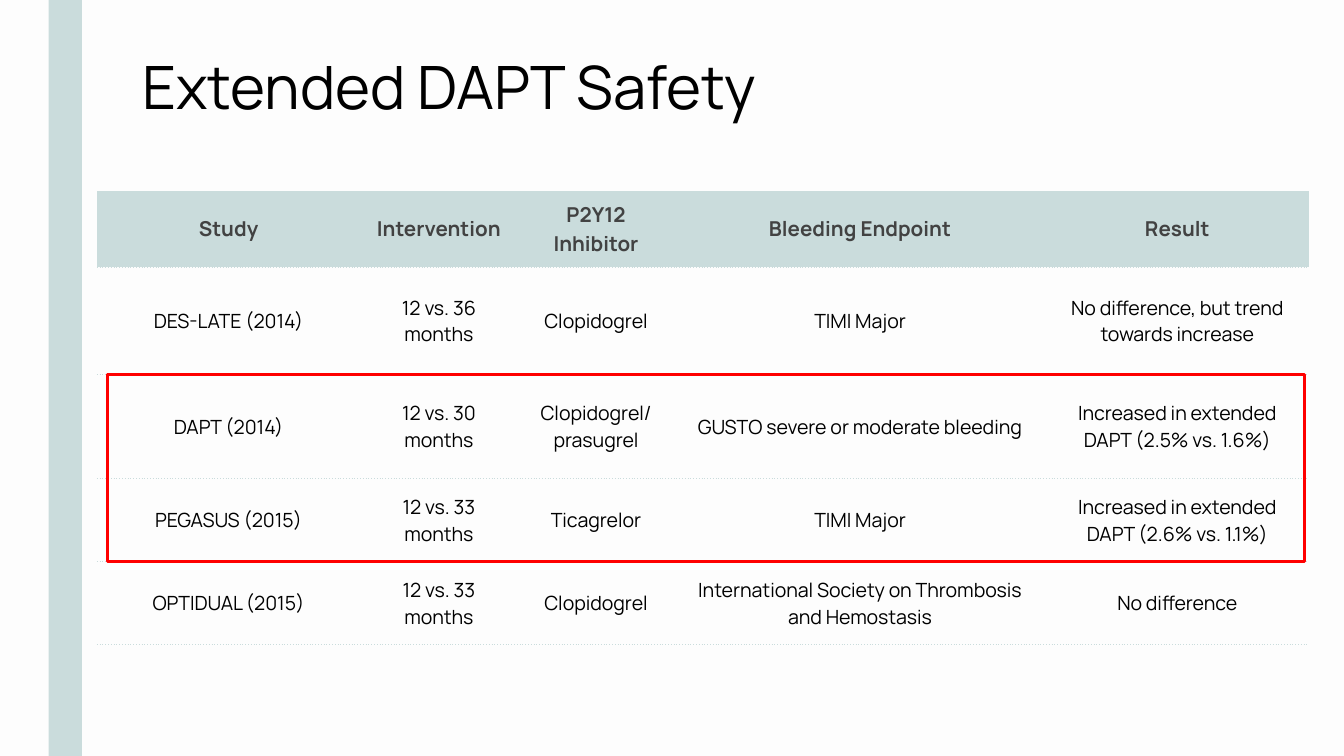
from lxml.etree import SubElement
from pptx import Presentation
from pptx.dml.color import RGBColor as Rgb
from pptx.enum.shapes import MSO_SHAPE as Preset
from pptx.enum.text import MSO_ANCHOR as Anchor, PP_ALIGN as Align
from pptx.oxml import parse_xml
from pptx.oxml.ns import nsdecls, qn
from pptx.util import Cm, Pt

TITLE = "Extended DAPT Safety"
HEADER = ["Study", "Intervention", "P2Y12 Inhibitor", "Bleeding Endpoint", "Result"]
STUDIES = [
    ["DES-LATE (2014)", "12 vs. 36 months", "Clopidogrel", "TIMI Major",
     "No difference, but trend towards increase"],
    ["DAPT (2014)", "12 vs. 30 months", "Clopidogrel/ prasugrel",
     "GUSTO severe or moderate bleeding", "Increased in extended DAPT (2.5% vs. 1.6%)"],
    ["PEGASUS (2015)", "12 vs. 33 months", "Ticagrelor", "TIMI Major",
     "Increased in extended DAPT (2.6% vs. 1.1%)"],
    ["OPTIDUAL (2015)", "12 vs. 33\nmonths", "Clopidogrel",
     "International Society on Thrombosis and Hemostasis", "No difference"],
]

THEME = {
    "background": "FDFDFD",
    "accent": "CADCDC",
    "highlight": "FF0000",
    "title": {"name": "Manrope", "size": Pt(32), "bold": False, "color": "000000"},
    "header": {"name": "Manrope", "size": Pt(11), "bold": True, "color": "424242"},
    "body": {"name": "Manrope", "size": Pt(10.5), "bold": False, "color": "000000"},
}
PLAIN_TABLE = "{2D5ABB26-0587-4C30-8999-92F81FD0307C}"
SLIDE_WIDTH, SLIDE_HEIGHT = 25.4, 14.29
TABLE_LEFT, TABLE_TOP = 1.83, 3.61
COLUMN_WIDTHS = [4.98, 2.97, 2.97, 7.01, 4.98]
ROW_HEIGHTS = [1.44, 2.03, 1.97, 1.57, 1.57]
HIGHLIGHTED_ROWS = slice(2, 4)
CELL_FORMAT = {
    "vertical_anchor": Anchor.MIDDLE,
    "margin_left": Cm(0.25),
    "margin_right": Cm(0.25),
    "margin_top": Cm(0.18),
    "margin_bottom": Cm(0.18),
}


def set_attributes(target, values):
    for name, value in values.items():
        setattr(target, name, value)


def write(text_frame, text, style, alignment):
    text_frame.text = text
    for paragraph in text_frame.paragraphs:
        paragraph.alignment = alignment
        for run in paragraph.runs:
            set_attributes(run.font, {k: v for k, v in style.items() if k != "color"})
            run.font.color.rgb = Rgb.from_string(style["color"])


def paint(fill, color):
    if color:
        fill.solid()
        fill.fore_color.rgb = Rgb.from_string(color)
    else:
        fill.background()


def add_rectangle(slide, box, fill=None, line=None):
    shape = slide.shapes.add_shape(Preset.RECTANGLE, *map(Cm, box))
    shape.shadow.inherit = False
    paint(shape.fill, fill)
    paint(shape.line.fill, line)
    if line:
        shape.line.width = Pt(1.5)


def add_dotted_bottom(cell):
    border = parse_xml(f'<a:lnB {nsdecls("a")} w="{Pt(0.75)}"/>')
    solid = SubElement(border, qn("a:solidFill"))
    SubElement(solid, qn("a:srgbClr"), val=THEME["accent"])
    SubElement(border, qn("a:prstDash"), val="dot")
    cell._tc.get_or_add_tcPr().insert(0, border)


def add_title(slide):
    box = slide.shapes.add_textbox(Cm(2.44), Cm(0.81), Cm(17.93), Cm(1.7))
    box.text_frame.word_wrap = True
    write(box.text_frame, TITLE, THEME["title"], Align.LEFT)


def add_study_table(slide):
    rows = [HEADER] + STUDIES
    frame = slide.shapes.add_table(
        len(rows), len(HEADER), Cm(TABLE_LEFT), Cm(TABLE_TOP),
        Cm(sum(COLUMN_WIDTHS)), Cm(sum(ROW_HEIGHTS)))
    table = frame.table
    set_attributes(table, {"first_row": False, "horz_banding": False})
    table._tbl.tblPr.find(qn("a:tableStyleId")).text = PLAIN_TABLE
    for column, width in zip(table.columns, COLUMN_WIDTHS):
        column.width = Cm(width)
    for row, height, texts in zip(table.rows, ROW_HEIGHTS, rows):
        row.height = Cm(height)
        is_header = texts is HEADER
        for cell, text in zip(row.cells, texts):
            set_attributes(cell, CELL_FORMAT)
            paint(cell.fill, THEME["accent"] if is_header else None)
            add_dotted_bottom(cell)
            write(cell.text_frame, text, THEME["header" if is_header else "body"], Align.CENTER)


def main():
    presentation = Presentation()
    set_attributes(presentation, {"slide_width": Cm(SLIDE_WIDTH), "slide_height": Cm(SLIDE_HEIGHT)})
    slide = presentation.slides.add_slide(presentation.slide_layouts[6])
    paint(slide.background.fill, THEME["background"])
    add_rectangle(slide, (0.92, 0, 0.63, SLIDE_HEIGHT), fill=THEME["accent"])
    add_title(slide)
    add_study_table(slide)
    highlight_top = TABLE_TOP + sum(ROW_HEIGHTS[:HIGHLIGHTED_ROWS.start])
    highlight_height = sum(ROW_HEIGHTS[HIGHLIGHTED_ROWS])
    add_rectangle(slide, (2.03, highlight_top, 22.63, highlight_height), line=THEME["highlight"])
    presentation.save("out.pptx")


if __name__ == "__main__":
    main()
